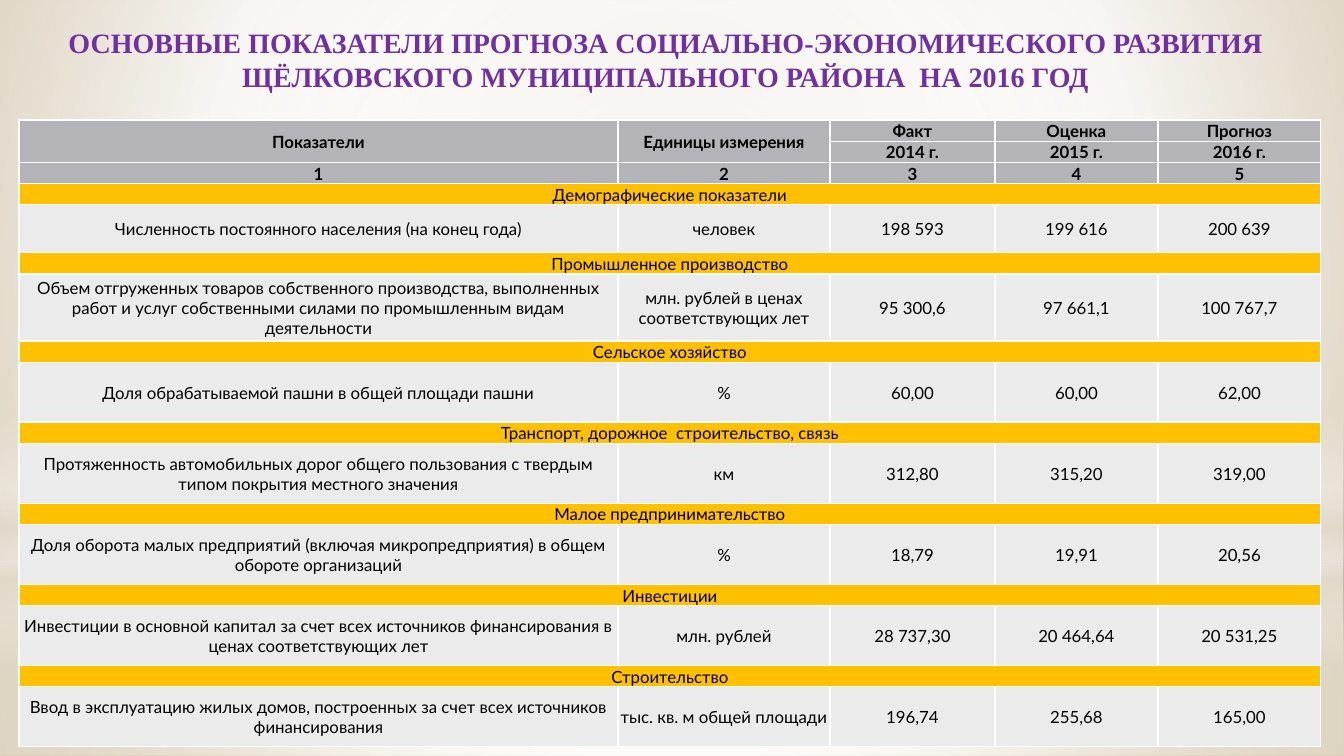
from lxml import etree
from pptx import Presentation
from pptx.dml.color import RGBColor
from pptx.enum.shapes import MSO_SHAPE
from pptx.enum.text import MSO_ANCHOR, MSO_AUTO_SIZE, PP_ALIGN
from pptx.oxml import parse_xml
from pptx.oxml.ns import nsdecls, qn
from pptx.util import Pt

PX = 9071.43  # EMU per px, 100.8 px to the inch
WIDE, HIGH = 1344, 756
RECT, OVAL = MSO_SHAPE.RECTANGLE, MSO_SHAPE.OVAL
CENTER = PP_ALIGN.CENTER
MIDDLE, BOTTOM = MSO_ANCHOR.MIDDLE, MSO_ANCHOR.BOTTOM

PURPLE = RGBColor(0x70, 0x30, 0xA0)
BLACK = RGBColor(0, 0, 0)
WHITE = RGBColor(0xFF, 0xFF, 0xFF)
GRAY = RGBColor(0xB4, 0xB4, 0xB8)
GOLD = RGBColor(0xFF, 0xC0, 0x00)
PALE = RGBColor(0xEB, 0xEB, 0xEB)
CREAM = RGBColor(0xE3, 0xDC, 0xCF)
SAND = RGBColor(0xDF, 0xD5, 0xC1)
TAN = RGBColor(0xCC, 0xB7, 0x91)


def px(*sizes):
    return [round(size * PX) for size in sizes]


def write(frame, text, size=12, font="Lato", color=BLACK, bold=False):
    frame.word_wrap = True
    para = frame.paragraphs[0]
    para.alignment = CENTER
    run = para.add_run()
    run.text = text
    run.font.size = Pt(size)
    run.font.name = font
    run.font.bold = bold
    run.font.color.rgb = color


def blend(owner, stops, focus=None):
    """Turn the first solid fill in owner into a radial or vertical gradient."""
    marks = "".join(
        f'<a:gs pos="{pos * 1000}"><a:srgbClr val="{color}">'
        f'<a:alpha val="{alpha * 1000}"/></a:srgbClr></a:gs>'
        for pos, color, alpha in stops)
    if focus:
        sides = " ".join(f'{side}="{part * 1000}"' for side, part in zip("ltrb", focus))
        shade = f'<a:path path="circle"><a:fillToRect {sides}/></a:path>'
    else:
        shade = '<a:lin ang="5400000" scaled="0"/>'
    solid = owner.find(".//" + qn("a:solidFill"))
    solid.getparent().replace(solid, parse_xml(
        f'<a:gradFill {nsdecls("a")} rotWithShape="1">'
        f'<a:gsLst>{marks}</a:gsLst>{shade}</a:gradFill>'))


prs = Presentation()
prs.slide_width, prs.slide_height = px(WIDE, HIGH)
slide = prs.slides.add_slide(prs.slide_layouts[6])

# Background and its soft light layers
slide.background.fill.solid()
slide.background.fill.fore_color.rgb = WHITE
blend(slide.element, [(0, SAND, 100), (60, WHITE, 100), (100, TAN, 100)], (20, 10, 20, 60))
MID = (50, 50, 50, 50)
layers = [
    (RECT, 562, 194, [(0, WHITE, 91), (37, WHITE, 76), (100, CREAM, 79)], MID),
    (RECT, 0, 562, [(0, WHITE, 89), (48, WHITE, 62), (100, CREAM, 79)], MID),
    (RECT, 415, 252, [(0, WHITE, 0), (29, WHITE, 30), (45, CREAM, 40),
                      (55, WHITE, 26), (65, CREAM, 60), (100, WHITE, 0)], None),
    (OVAL, 176, 562, [(0, WHITE, 100), (56, WHITE, 0)], MID),
]
for kind, top, tall, stops, focus in layers:
    layer = slide.shapes.add_shape(kind, *px(0, top, WIDE, tall))
    layer.shadow.inherit = False
    layer.line.fill.background()
    layer.fill.solid()
    layer.fill.fore_color.rgb = WHITE
    blend(layer.element, stops, focus)

title = slide.shapes.add_textbox(*px(56, 21, 1219, 78)).text_frame
title.auto_size = MSO_AUTO_SIZE.SHAPE_TO_FIT_TEXT
write(title, "ОСНОВНЫЕ ПОКАЗАТЕЛИ ПРОГНОЗА СОЦИАЛЬНО-ЭКОНОМИЧЕСКОГО "
      "РАЗВИТИЯ ЩЁЛКОВСКОГО МУНИЦИПАЛЬНОГО РАЙОНА  НА 2016 ГОД",
      size=20, font="Times New Roman", color=PURPLE, bold=True)

# Table content: header rows, then a section band above each data row
HEAD = [
    ["Показатели", "Единицы измерения", "Факт", "Оценка", "Прогноз"],
    ["", "", "2014 г.", "2015 г.", "2016 г."],
    ["1", "2", "3", "4", "5"],
]
PARTS = [
    ("Демографические показатели", 48,
     ["Численность постоянного населения (на конец года)", "человек",
      "198 593", "199 616", "200 639"]),
    ("Промышленное производство", 67,
     ["Объем отгруженных товаров собственного производства, выполненных работ и услуг "
      "собственными силами по промышленным видам деятельности",
      "млн. рублей в ценах соответствующих лет", "95 300,6", "97 661,1", "100 767,7"]),
    ("Сельское хозяйство", 60,
     ["Доля обрабатываемой пашни в общей площади пашни", "%", "60,00", "60,00", "62,00"]),
    ("Транспорт, дорожное  строительство, связь", 60,
     ["Протяженность автомобильных дорог общего пользования с твердым типом покрытия "
      "местного значения", "км", "312,80", "315,20", "319,00"]),
    ("Малое предпринимательство", 60,
     ["Доля оборота малых предприятий (включая микропредприятия) в общем обороте "
      "организаций", "%", "18,79", "19,91", "20,56"]),
    ("Инвестиции", 60,
     ["Инвестиции в основной капитал за счет всех источников финансирования в ценах "
      "соответствующих лет", "млн. рублей", "28 737,30", "20 464,64", "20 531,25"]),
    ("Строительство", 60,
     ["Ввод в эксплуатацию жилых домов, построенных за счет всех источников "
      "финансирования", "тыс. кв. м общей площади", "196,74", "255,68", "165,00"]),
]
COLS = [599, 212, 165, 163, 163]
BAND = 21

rows = [(BAND, GRAY, texts) for texts in HEAD]
for name, tall, texts in PARTS:
    rows += [(BAND, GOLD, [name, "", "", "", ""]), (tall, PALE, texts)]

total = sum(tall for tall, _, _ in rows)
table = slide.shapes.add_table(
    len(rows), len(COLS), *px(19, 120, sum(COLS), total)).table
table.first_row = table.horz_banding = False
for col, wide in zip(table.columns, px(*COLS)):
    col.width = wide

for r, (tall, color, texts) in enumerate(rows):
    table.rows[r].height = px(tall)[0]
    for c, text in enumerate(texts):
        cell = table.cell(r, c)
        cell.fill.solid()
        cell.fill.fore_color.rgb = color
        cell.vertical_anchor = MIDDLE
        cell.margin_left, cell.margin_right, cell.margin_top, cell.margin_bottom = px(1, 1, 1, 0)
        write(cell.text_frame, text, bold=color == GRAY)
        props = cell._tc.get_or_add_tcPr()
        for spot, side in enumerate("LRTB"):
            edge = etree.Element(qn("a:ln" + side), w=str(Pt(1)))
            ink = etree.SubElement(edge, qn("a:solidFill"))
            etree.SubElement(ink, qn("a:srgbClr"), val=str(WHITE))
            props.insert(spot, edge)
    if color == GOLD:
        table.cell(r, 0).merge(table.cell(r, len(COLS) - 1))

for c in range(2):
    table.cell(0, c).merge(table.cell(1, c))
table.cell(2, 0).vertical_anchor = BOTTOM

prs.save("out.pptx")
